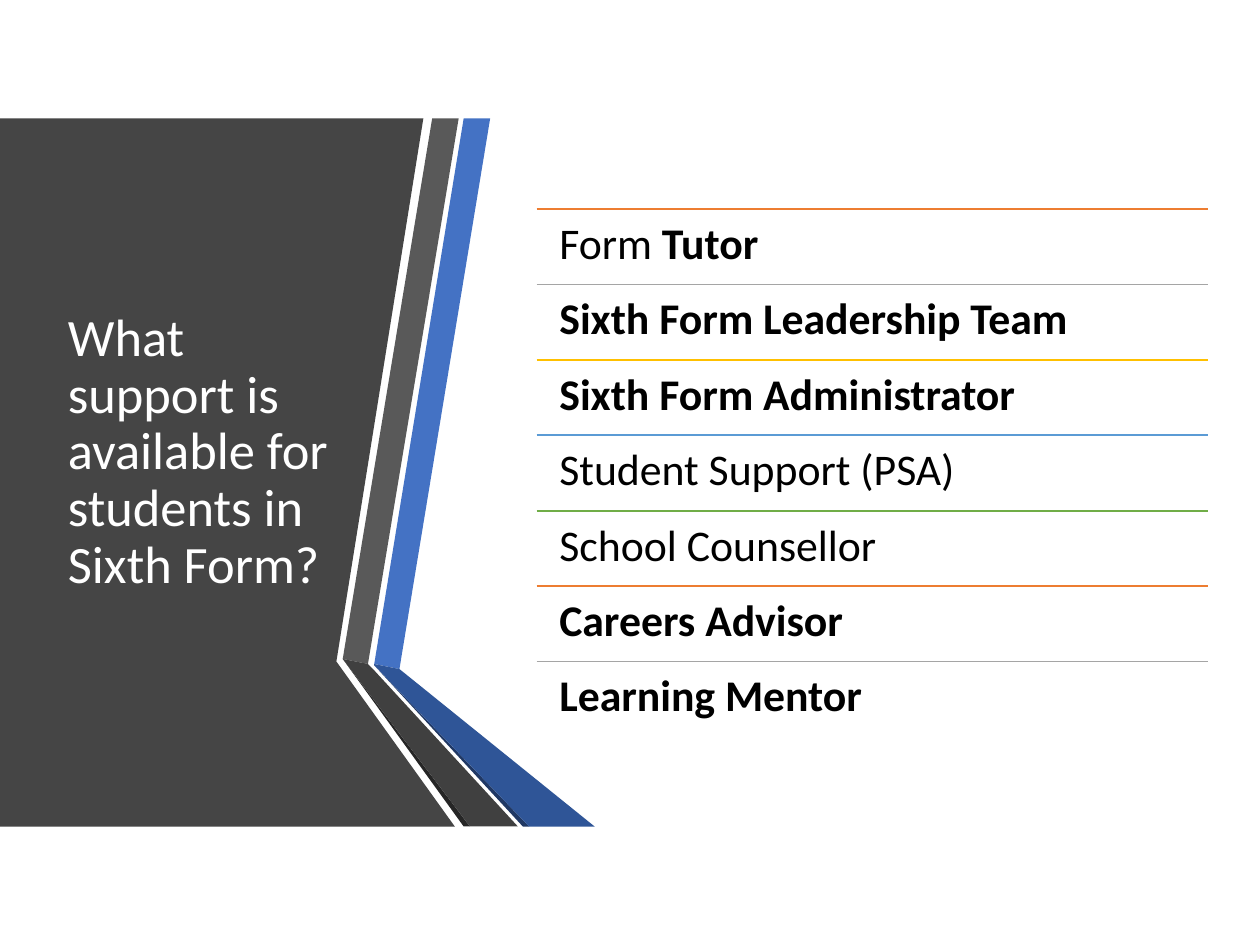
from dataclasses import dataclass

from lxml import etree
from pptx import Presentation, util as u
from pptx.dml.color import RGBColor
from pptx.enum import shapes, text
from pptx.oxml.ns import qn


@dataclass(frozen=True)
class Theme:
    font: str = "Calibri"
    title_size: int = 30
    row_size: int = 25
    line_width: int = 1
    line_spacing: float = 0.9
    white: str = "FFFFFF"
    black: str = "000000"
    panel: str = "454545"
    blue: str = "4472C4"
    blue_fold: str = "2F5597"
    blue_shade: str = "203864"
    grey: str = "595959"
    grey_fold: str = "404040"
    grey_shade: str = "262626"
    rules: tuple = ("ED7D31", "A5A5A5", "FFC000", "5B9BD5", "70AD47")


THEME = Theme()
TOP, BOTTOM = 0.94, 6.56

RIBBONS = [
    (THEME.panel, [(0, TOP), (3.36, TOP), (2.67, 5.25), (3.61, BOTTOM), (0, BOTTOM)]),
    (THEME.blue, [(2.97, 5.27), (3.17, 5.31), (3.89, TOP), (3.68, TOP)]),
    (THEME.grey, [(3.64, TOP), (3.43, TOP), (2.72, 5.23), (2.92, 5.27)]),
    (THEME.grey_shade, [(2.72, 5.23), (3.68, BOTTOM), (3.73, BOTTOM)]),
    (THEME.blue_shade, [(2.97, 5.28), (4.15, BOTTOM), (4.2, BOTTOM)]),
    (THEME.blue_fold, [(2.97, 5.28), (4.2, BOTTOM), (4.72, BOTTOM), (3.17, 5.31), (2.97, 5.27)]),
    (THEME.grey_fold, [(4.11, BOTTOM), (2.96, 5.31), (2.92, 5.27), (2.72, 5.23), (3.73, BOTTOM)]),
]

# Each row is a list of (wording, bold) runs.
SUPPORT_ROWS = [
    [("Form ", False), ("Tutor", True)],
    [("Sixth Form Leadership Team", True)],
    [("Sixth Form Administrator", True)],
    [("Student Support (PSA)", False)],
    [("School Counsellor", False)],
    [("Careers Advisor", True)],
    [("Learning Mentor", True)],
]


class SlideBuilder:
    def __init__(self, slide, theme):
        self.slide = slide
        self.theme = theme

    def polygon(self, color, points):
        corners = [(u.Inches(x), u.Inches(y)) for x, y in points]
        builder = self.slide.shapes.build_freeform(*corners[0])
        builder.add_line_segments(corners[1:], close=True)
        shape = builder.convert_to_shape()
        shape.shadow.inherit = False
        shape.fill.solid()
        shape.fill.fore_color.rgb = RGBColor.from_string(color)
        shape.line.fill.background()

    def rule(self, left, top, width, color):
        line = self.slide.shapes.add_connector(
            shapes.MSO_CONNECTOR.STRAIGHT,
            u.Inches(left), u.Inches(top), u.Inches(left + width), u.Inches(top))
        line.line.color.rgb = RGBColor.from_string(color)
        line.line.width = u.Pt(self.theme.line_width)
        etree.SubElement(line._element.spPr, qn("a:effectLst"))

    def text_box(self, box, runs, size, color, anchor, insets):
        """Add one paragraph; insets are (horizontal, vertical) inches."""
        shape = self.slide.shapes.add_textbox(*map(u.Inches, box))
        frame = shape.text_frame
        frame.word_wrap = True
        frame.vertical_anchor = anchor
        frame.margin_left = frame.margin_right = u.Inches(insets[0])
        frame.margin_top = frame.margin_bottom = u.Inches(insets[1])
        paragraph = frame.paragraphs[0]
        paragraph.line_spacing = self.theme.line_spacing
        for wording, bold in runs:
            run = paragraph.add_run()
            run.text = wording
            run.font.name = self.theme.font
            run.font.size = u.Pt(size)
            run.font.bold = bold
            run.font.color.rgb = RGBColor.from_string(color)


def main():
    presentation = Presentation()
    presentation.slide_width, presentation.slide_height = u.Inches(10), u.Inches(7.5)
    slide = presentation.slides.add_slide(presentation.slide_layouts[6])
    builder = SlideBuilder(slide, THEME)

    for color, points in RIBBONS:
        builder.polygon(color, points)

    builder.text_box(
        (0.44, 1.5, 2.28, 4.19),
        [("What support is available for students in Sixth Form?", False)],
        THEME.title_size, THEME.white, text.MSO_ANCHOR.MIDDLE, (0.1, 0.05))

    left, width, first_top, last_top = 4.26, 5.33, 1.66, 5.25
    row_height = (last_top - first_top) / (len(SUPPORT_ROWS) - 1)
    for index, runs in enumerate(SUPPORT_ROWS):
        top = first_top + index * row_height
        builder.rule(left, top, width, THEME.rules[index % len(THEME.rules)])
        builder.text_box((left, top, width, row_height), runs, THEME.row_size,
                         THEME.black, text.MSO_ANCHOR.TOP, (0.18, 0.1))

    presentation.save("out.pptx")


if __name__ == "__main__":
    main()
